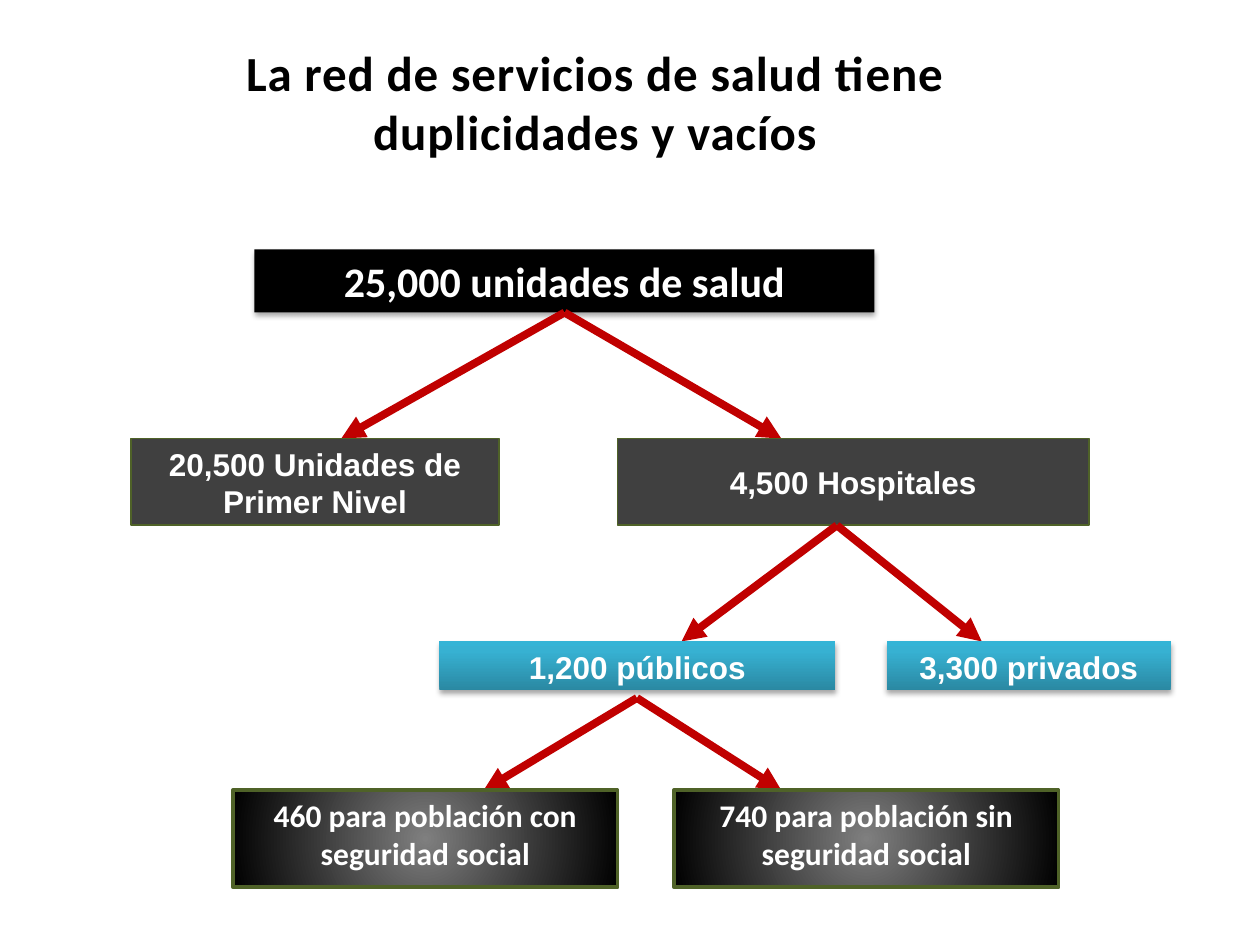
from collections import namedtuple
from dataclasses import dataclass

from pptx import Presentation
from pptx.dml.color import RGBColor
from pptx.enum.shapes import MSO_CONNECTOR as Link, MSO_SHAPE as Shape
from pptx.enum.text import MSO_ANCHOR as Anchor, MSO_AUTO_SIZE as Fit, PP_ALIGN as Align
from pptx.oxml import parse_xml
from pptx.oxml.ns import nsdecls
from pptx.util import Cm, Pt

Box = namedtuple("Box", "left top width height")


@dataclass(frozen=True)
class Theme:
    ink: str = "000000"
    paper: str = "FFFFFF"
    slate: str = "404040"
    border: str = "4F6228"
    arrow: str = "C00000"
    teal: tuple = ((0, "2A88A2"), (80, "37B1D2"), (100, "34B4D6"))
    glow: tuple = ((0, "7F7F7F"), (100, "000000"))
    heading: str = "Calibri"
    label: str = "Arial"
    title_size: int = 28
    total_size: int = 24
    node_size: int = 18


THEME = Theme()
UPWARD = '<a:lin ang="16200000" scaled="0"/>'
RADIAL = ('<a:path path="circle"><a:fillToRect l="50000" t="50000" '
          'r="50000" b="50000"/></a:path>')

TOTAL = dict(fill=THEME.ink, shadow=True, font=THEME.heading, size=THEME.total_size,
             fit=Fit.SHAPE_TO_FIT_TEXT)
KIND = dict(fill=THEME.slate, border=1, font=THEME.label)
SECTOR = dict(gradient=(THEME.teal, UPWARD), shadow=True, font=THEME.label)
COVERAGE = dict(gradient=(THEME.glow, RADIAL), border=2.25, font=THEME.heading)


def cm(*lengths):
    return [Cm(length) for length in lengths]


def drawing_xml(tag, content=""):
    return parse_xml(f'<a:{tag} {nsdecls("a")}>{content}</a:{tag}>')


def write(paragraph, text, font, size, color):
    paragraph.alignment = Align.CENTER
    run = paragraph.add_run()
    run.text = text
    for name, value in dict(name=font, size=Pt(size), bold=True).items():
        setattr(run.font, name, value)
    run.font.color.rgb = RGBColor.from_string(color)
    return run


def paint_gradient(node, stops, direction):
    colors = "".join(f'<a:gs pos="{at * 1000}"><a:srgbClr val="{color}"/></a:gs>'
                     for at, color in stops)
    geometry = node._element.spPr.find("{*}prstGeom")
    geometry.addnext(drawing_xml("gradFill", f"<a:gsLst>{colors}</a:gsLst>{direction}"))


def cast_shadow(node):
    effects = node._element.spPr.find("{*}effectLst")
    effects.append(parse_xml(
        f'<a:outerShdw {nsdecls("a")} blurRad="{Pt(3.1)}" dist="{Pt(1.8)}" dir="5400000" '
        'rotWithShape="0"><a:srgbClr val="000000"><a:alpha val="35000"/></a:srgbClr>'
        '</a:outerShdw>'))


def draw_node(slide, box, text, font, fill=None, gradient=None, border=0, shadow=False,
              size=THEME.node_size, anchor=Anchor.TOP, fit=Fit.NONE):
    node = slide.shapes.add_shape(Shape.RECTANGLE, *cm(*box))
    node.shadow.inherit = False
    if gradient:
        paint_gradient(node, *gradient)
    else:
        node.fill.solid()
        node.fill.fore_color.rgb = RGBColor.from_string(fill)
    if border:
        node.line.color.rgb = RGBColor.from_string(THEME.border)
        node.line.width = Pt(border)
    else:
        node.line.fill.background()
    if shadow:
        cast_shadow(node)
    frame = node.text_frame
    for name, value in dict(word_wrap=True, vertical_anchor=anchor, auto_size=fit).items():
        setattr(frame, name, value)
    write(frame.paragraphs[0], text, font, size, THEME.paper)
    return node


def draw_level(slide, box, nodes, style):
    """Place a row of (offset, width, text, extra style) nodes, as tall as the box."""
    for offset, width, text, extra in nodes:
        place = Box(box.left + offset, box.top, width, box.height)
        draw_node(slide, place, text, **style, **extra)


def draw_branches(slide, box, apex, parent=None):
    """Point two arrows from the apex on the top edge to the bottom corners."""
    for end in (box.left, box.left + box.width):
        arrow = slide.shapes.add_connector(
            Link.STRAIGHT, *cm(box.left + apex, box.top, end, box.top + box.height))
        if parent is not None:
            arrow.begin_connect(parent, 2)
        arrow.line.color.rgb = RGBColor.from_string(THEME.arrow)
        arrow.line.width = Pt(4.5)
        arrow.line._get_or_add_ln().append(
            parse_xml(f'<a:tailEnd {nsdecls("a")} type="triangle"/>'))
        arrow._element.spPr.append(drawing_xml("effectLst"))


def draw_title(slide, box, lines):
    frame = slide.shapes.add_textbox(*cm(*box)).text_frame
    frame.word_wrap = True
    frame.auto_size = Fit.SHAPE_TO_FIT_TEXT
    for index, line in enumerate(lines):
        paragraph = frame.add_paragraph() if index else frame.paragraphs[0]
        run = write(paragraph, line, THEME.heading, THEME.title_size, THEME.ink)
        run._r.get_or_add_rPr().set("spc", "50")


def main():
    deck = Presentation()
    deck.slide_width, deck.slide_height = cm(25.4, 19.05)
    slide = deck.slides.add_slide(deck.slide_layouts[6])

    draw_title(slide, Box(0.1, 0.74, 23.8, 2.64),
               ["La red de servicios de salud tiene", "duplicidades y vacíos"])

    total = draw_node(slide, Box(5.13, 5.03, 12.5, 1.27), "25,000 unidades de salud", **TOTAL)
    draw_branches(slide, Box(6.88, 6.3, 8.87, 2.54), 4.5, total)
    draw_level(slide, Box(2.64, 8.84, 19.31, 1.75), [
        (0, 7.42, "20,500 Unidades de Primer Nivel", {}),
        (9.81, 9.5, "4,500 Hospitales", dict(anchor=Anchor.MIDDLE)),
    ], KIND)

    draw_branches(slide, Box(13.74, 10.59, 6.05, 2.34), 3.13)
    draw_level(slide, Box(8.86, 12.93, 14.74, 0.99), [
        (0, 7.98, "1,200 públicos", {}),
        (9.02, 5.72, "3,300 privados", {}),
    ], SECTOR)

    draw_branches(slide, Box(9.75, 14.07, 6, 1.86), 3.09)
    draw_level(slide, Box(4.7, 15.93, 16.64, 1.96), [
        (0, 7.75, "460 para población con seguridad social", {}),
        (8.89, 7.75, "740 para población sin seguridad social", {}),
    ], COVERAGE)

    deck.save("out.pptx")


if __name__ == "__main__":
    main()
